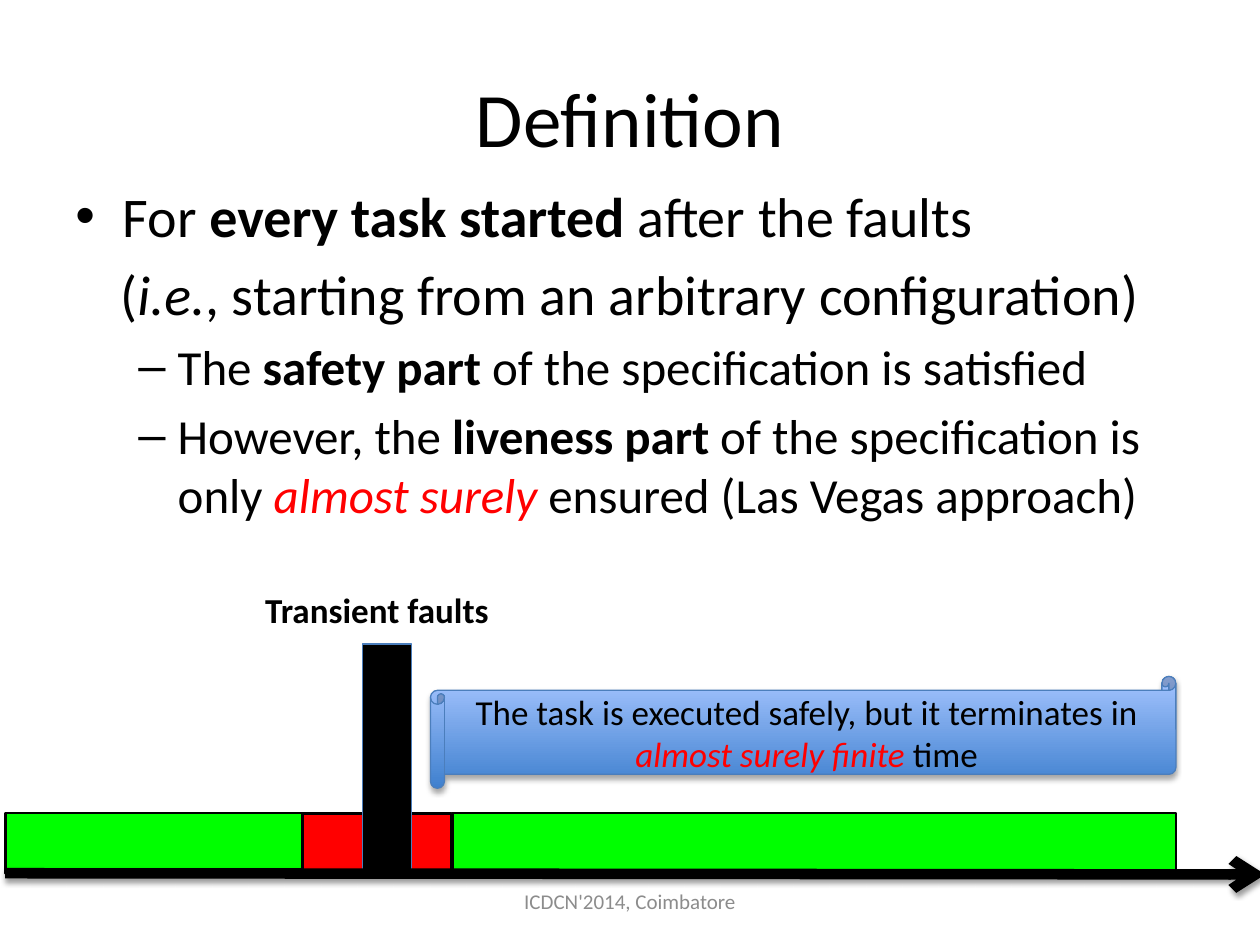
from lxml import etree
from pptx import Presentation
from pptx.dml.color import RGBColor
from pptx.enum.shapes import MSO_CONNECTOR, MSO_SHAPE
from pptx.enum.text import MSO_ANCHOR, PP_ALIGN
from pptx.oxml.ns import qn
from pptx.util import Pt

RECTANGLE = MSO_SHAPE.RECTANGLE
SCROLL = MSO_SHAPE.HORIZONTAL_SCROLL
STRAIGHT = MSO_CONNECTOR.STRAIGHT
TOP, MIDDLE = MSO_ANCHOR.TOP, MSO_ANCHOR.MIDDLE
LEFT, CENTER = PP_ALIGN.LEFT, PP_ALIGN.CENTER

BLACK = RGBColor(0x00, 0x00, 0x00)
RED = RGBColor(0xFF, 0x00, 0x00)
GREEN = RGBColor(0x00, 0xFF, 0x00)
GRAY = RGBColor(0x8C, 0x8C, 0x8C)
BLUE_LINE = RGBColor(0x4B, 0x7E, 0xBC)
BLUE_DARK = RGBColor(0x3F, 0x80, 0xCE)
BLUE_LIGHT = RGBColor(0xA4, 0xC4, 0xFF)
FONT_NAME = "Calibri"

PLAIN, BOLD, ITALIC, RED_ITALIC = "plain", "bold", "italic", "red italic"

BODY = [
    (32, LEFT, "•", 27, -27, [("For ", PLAIN), ("every task started ", BOLD),
                              ("after the faults", PLAIN)]),
    (32, CENTER, None, 0, 0, [("(", PLAIN), ("i.e.", ITALIC),
                              (", starting from an arbitrary configuration)", PLAIN)]),
    (28, LEFT, "–", 58.5, -22.5, [("The ", PLAIN), ("safety part ", BOLD),
                                  ("of the specification is satisfied", PLAIN)]),
    (28, LEFT, "–", 58.5, -22.5, [("However, the ", PLAIN), ("liveness part ", BOLD),
                                  ("of the specification is only ", PLAIN),
                                  ("almost surely ", RED_ITALIC),
                                  ("ensured (Las Vegas approach)", PLAIN)]),
]


def write_paragraph(paragraph, runs, size, color=BLACK, align=LEFT):
    paragraph.alignment = align
    paragraph.font.name = FONT_NAME
    paragraph.font.size = Pt(size)
    paragraph.font.color.rgb = color
    for text, style in runs:
        run = paragraph.add_run()
        run.text = text
        if style == BOLD:
            run.font.bold = True
        if style in (ITALIC, RED_ITALIC):
            run.font.italic = True
        if style == RED_ITALIC:
            run.font.color.rgb = RED


def set_bullet(paragraph, bullet, margin, indent):
    properties = paragraph._p.get_or_add_pPr()
    properties.set("marL", str(Pt(margin)))
    properties.set("indent", str(Pt(indent)))
    if bullet:
        font = etree.SubElement(properties, qn("a:buFont"))
        font.set("typeface", "Arial")
        etree.SubElement(properties, qn("a:buChar")).set("char", bullet)


def add_text(slide, left, top, width, height, anchor=TOP):
    box = slide.shapes.add_textbox(Pt(left), Pt(top), Pt(width), Pt(height))
    box.text_frame.word_wrap = True
    box.text_frame.vertical_anchor = anchor
    return box.text_frame


def add_body(slide):
    frame = add_text(slide, 36, 100, 648, 371)
    for index, (size, align, bullet, margin, indent, runs) in enumerate(BODY):
        paragraph = frame.add_paragraph() if index else frame.paragraphs[0]
        write_paragraph(paragraph, runs, size, align=align)
        paragraph.space_before = Pt(size * 0.2)
        set_bullet(paragraph, bullet, margin, indent)


def add_bar(slide, left, top, width, height, color, line_color=BLACK, line_width=1.5):
    bar = slide.shapes.add_shape(RECTANGLE, Pt(left), Pt(top), Pt(width), Pt(height))
    bar.shadow.inherit = False
    bar.fill.solid()
    bar.fill.fore_color.rgb = color
    bar.line.color.rgb = line_color
    bar.line.width = Pt(line_width)


def add_shadow(shape, distance, opacity):
    effects = etree.SubElement(shape._element.spPr, qn("a:effectLst"))
    shadow = etree.SubElement(effects, qn("a:outerShdw"), blurRad=str(Pt(3.1)),
                              dist=str(Pt(distance)), dir="5400000", rotWithShape="0")
    color = etree.SubElement(shadow, qn("a:srgbClr"), val=str(BLACK))
    etree.SubElement(color, qn("a:alpha"), val=str(opacity * 1000))


def add_time_arrow(slide):
    arrow = slide.shapes.add_connector(STRAIGHT, Pt(3), Pt(499), Pt(723), Pt(499.7))
    arrow.line.color.rgb = BLACK
    arrow.line.width = Pt(6)
    etree.SubElement(arrow.line._get_or_add_ln(), qn("a:tailEnd"), type="arrow")
    add_shadow(arrow, 1.6, 38)


def add_scroll(slide, runs):
    scroll = slide.shapes.add_shape(SCROLL, Pt(246), Pt(386.5), Pt(426), Pt(64))
    scroll.fill.gradient()
    scroll.fill.gradient_angle = 90
    for stop, color in zip(scroll.fill.gradient_stops, (BLUE_DARK, BLUE_LIGHT)):
        stop.color.rgb = color
    scroll.line.color.rgb = BLUE_LINE
    scroll.line.width = Pt(0.75)
    add_shadow(scroll, 1.8, 35)
    scroll.text_frame.word_wrap = True
    scroll.text_frame.vertical_anchor = MIDDLE
    write_paragraph(scroll.text_frame.paragraphs[0], runs, 20, align=CENTER)


def main():
    presentation = Presentation()
    presentation.slide_width, presentation.slide_height = Pt(720), Pt(540)
    slide = presentation.slides.add_slide(presentation.slide_layouts[6])

    title = add_text(slide, 36, 21.6, 648, 90, MIDDLE)
    write_paragraph(title.paragraphs[0], [("Definition", PLAIN)], 44, align=CENTER)
    add_body(slide)
    footer = add_text(slide, 246, 500.5, 228, 28.8, MIDDLE)
    write_paragraph(footer.paragraphs[0], [("ICDCN'2014, Coimbatore", PLAIN)], 12,
                    GRAY, CENTER)

    add_bar(slide, 173, 465, 85, 34, RED)
    add_bar(slide, 3, 464.5, 170, 34.5, GREEN)
    add_bar(slide, 207, 368, 28, 132, BLACK, BLUE_LINE, 0.75)
    add_bar(slide, 258.5, 464.5, 413.5, 34, GREEN)
    add_time_arrow(slide)

    faults = add_text(slide, 144.5, 332.5, 158.5, 31.5)
    write_paragraph(faults.paragraphs[0], [("Transient faults", BOLD)], 20)
    add_scroll(slide, [("The task is executed safely, but it terminates in ", PLAIN),
                       ("almost surely finite", RED_ITALIC), (" time", PLAIN)])
    presentation.save("out.pptx")


if __name__ == "__main__":
    main()
